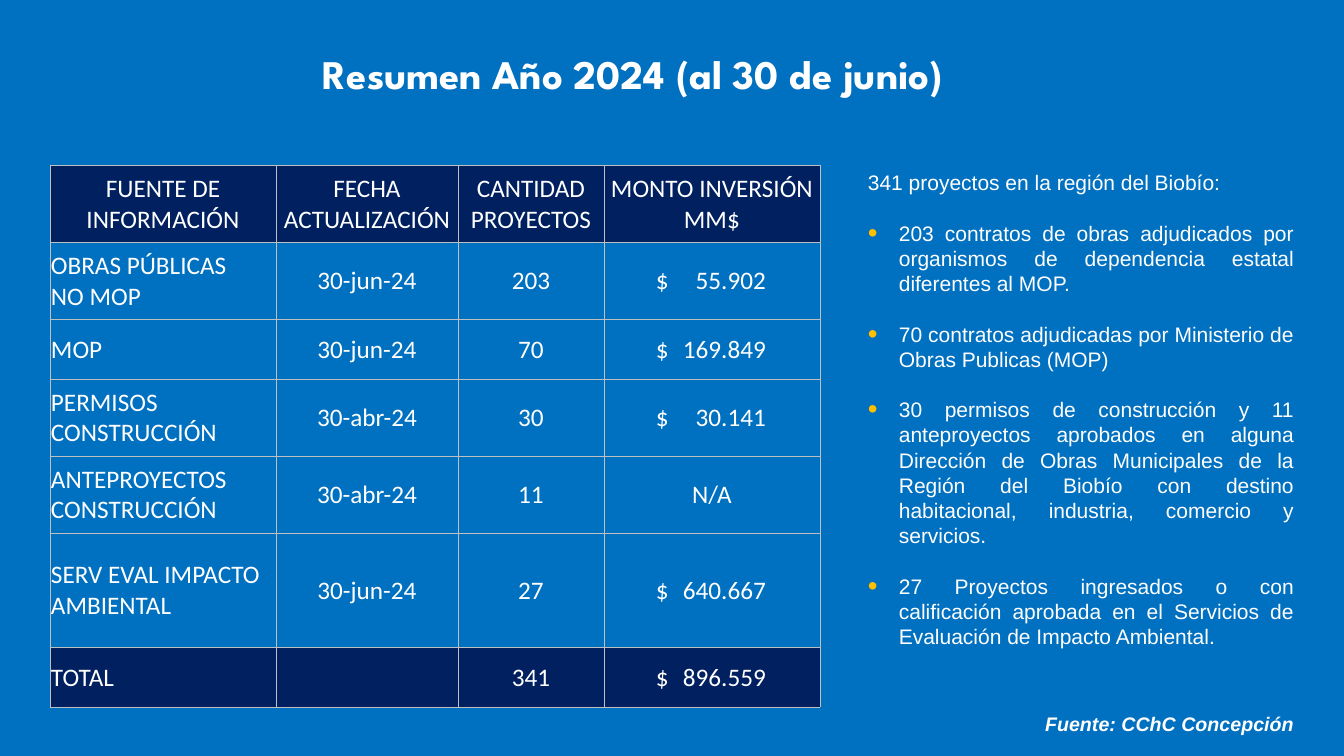
from lxml import etree
from pptx import Presentation
from pptx.dml.color import RGBColor
from pptx.enum.text import MSO_ANCHOR, MSO_AUTO_SIZE, PP_ALIGN
from pptx.oxml.ns import qn
from pptx.util import Pt

LEFT, CENTER, RIGHT, JUSTIFY = PP_ALIGN.LEFT, PP_ALIGN.CENTER, PP_ALIGN.RIGHT, PP_ALIGN.JUSTIFY
TOP, MIDDLE = MSO_ANCHOR.TOP, MSO_ANCHOR.MIDDLE
GROW = MSO_AUTO_SIZE.SHAPE_TO_FIT_TEXT
PX = 914400 / 100.8

THEME = {
    "background": "0070C0", "band": "002060", "text": "FFFFFF",
    "border": "BFBFBF", "bullet": "FFC000",
    "title": ("League Spartan", 29), "table": ("Calibri", 18),
    "body": ("Arial", 15), "source": ("Arial", 14),
}

HEADERS = ["FUENTE DE\nINFORMACIÓN", "FECHA\nACTUALIZACIÓN",
           "CANTIDAD\nPROYECTOS", "MONTO INVERSIÓN\nMM$"]
ROWS = [
    HEADERS,
    ["OBRAS PÚBLICAS\nNO MOP", "30-jun-24", "203", "$\t55.902"],
    ["MOP", "30-jun-24", "70", "$\t169.849"],
    ["PERMISOS\nCONSTRUCCIÓN", "30-abr-24", "30", "$\t30.141"],
    ["ANTEPROYECTOS\nCONSTRUCCIÓN", "30-abr-24", "11", "N/A"],
    ["SERV EVAL IMPACTO\nAMBIENTAL", "30-jun-24", "27", "$\t640.667"],
    ["TOTAL", "", "341", "$\t896.559"],
]
COLUMN_WIDTHS = [226, 182, 146, 216]
ROW_HEIGHTS = [77, 77, 60, 77, 77, 114, 60]
AMOUNT_INSET, AMOUNT_TAB = 52, 110

SUMMARY = [
    "341 proyectos en la región del Biobío:",
    "203 contratos de obras adjudicados por organismos de dependencia estatal "
    "diferentes al MOP.",
    "70 contratos adjudicadas por Ministerio de Obras Publicas (MOP)",
    "30 permisos de construcción y 11 anteproyectos aprobados en alguna Dirección "
    "de Obras Municipales de la Región del Biobío con destino habitacional, "
    "industria, comercio y servicios.",
    "27 Proyectos ingresados o con calificación aprobada en el Servicios de "
    "Evaluación de Impacto Ambiental.",
]


def px(*lengths):
    """Turn px lengths into a list of EMU."""
    return [round(length * PX) for length in lengths]


def write(text_frame, text, style, alignment, bold=False, italic=False):
    """Fill a text frame and format its paragraphs in a theme style."""
    text_frame.text = text
    text_frame.word_wrap = True
    for paragraph in text_frame.paragraphs:
        paragraph.alignment = alignment
        for run in paragraph.runs:
            run.font.name, size = THEME[style]
            run.font.size = Pt(size)
            run.font.bold, run.font.italic = bold, italic
            run.font.color.rgb = RGBColor.from_string(THEME["text"])


presentation = Presentation()
presentation.slide_width, presentation.slide_height = px(1344, 756)
slide = presentation.slides.add_slide(presentation.slide_layouts[5])
slide.background.fill.solid()
slide.background.fill.fore_color.rgb = RGBColor.from_string(THEME["background"])

# Title
title = slide.shapes.title
title.left, title.top, title.width, title.height = px(243, 44, 792, 59)
write(title.text_frame, "Resumen Año 2024 (al 30 de junio) ", "title", CENTER, bold=True)
title.text_frame.vertical_anchor = TOP
title.text_frame.auto_size = GROW

# Summary with bullets
summary = slide.shapes.add_textbox(*px(858, 165, 446, 494))
write(summary.text_frame, "\n".join(SUMMARY), "body", JUSTIFY)
summary.text_frame.auto_size = GROW
indent, = px(31)
for paragraph in summary.text_frame.paragraphs[1:]:
    paragraph.space_before = Pt(18)
    properties = paragraph._p.get_or_add_pPr()
    properties.set("marL", str(indent))
    properties.set("indent", str(-indent))
    color = etree.SubElement(properties, qn("a:buClr"))
    etree.SubElement(color, qn("a:srgbClr"), val=THEME["bullet"])
    etree.SubElement(properties, qn("a:buSzPct"), val="132000")
    etree.SubElement(properties, qn("a:buFont"), typeface="Arial")
    etree.SubElement(properties, qn("a:buChar"), char="•")

# Table of projects
table = slide.shapes.add_table(
    len(ROWS), len(HEADERS), *px(50, 165, sum(COLUMN_WIDTHS), sum(ROW_HEIGHTS))).table
table.first_row = table.horz_banding = False
for column, width in zip(table.columns, px(*COLUMN_WIDTHS)):
    column.width = width
for row, height in zip(table.rows, px(*ROW_HEIGHTS)):
    row.height = height

for row_index, texts in enumerate(ROWS):
    for column_index, text in enumerate(texts):
        cell = table.cell(row_index, column_index)
        is_amount = text.startswith("$")
        is_label = column_index == 0 and row_index > 0
        write(cell.text_frame, text, "table", LEFT if is_amount or is_label else CENTER)
        cell.vertical_anchor = MIDDLE
        cell.margin_left, cell.margin_top, cell.margin_right, cell.margin_bottom = px(
            AMOUNT_INSET if is_amount else 1, 1, 1, 0)
        if is_amount:
            properties = cell.text_frame.paragraphs[0]._p.get_or_add_pPr()
            tabs = etree.SubElement(properties, qn("a:tabLst"))
            etree.SubElement(tabs, qn("a:tab"), pos=str(px(AMOUNT_TAB)[0]), algn="r")
        if row_index in (0, len(ROWS) - 1):
            cell.fill.solid()
            cell.fill.fore_color.rgb = RGBColor.from_string(THEME["band"])
        else:
            cell.fill.background()
        cell_properties = cell._tc.get_or_add_tcPr()
        for position, side in enumerate(("lnL", "lnR", "lnT", "lnB")):
            border = etree.Element(qn(f"a:{side}"), w=str(Pt(0.5)))
            line_fill = etree.SubElement(border, qn("a:solidFill"))
            etree.SubElement(line_fill, qn("a:srgbClr"), val=THEME["border"])
            cell_properties.insert(position, border)

# Source line
source = slide.shapes.add_textbox(*px(926, 707, 378, 34))
write(source.text_frame, "Fuente: CChC Concepción", "source", RIGHT, bold=True, italic=True)
source.text_frame.auto_size = GROW

presentation.save("out.pptx")
